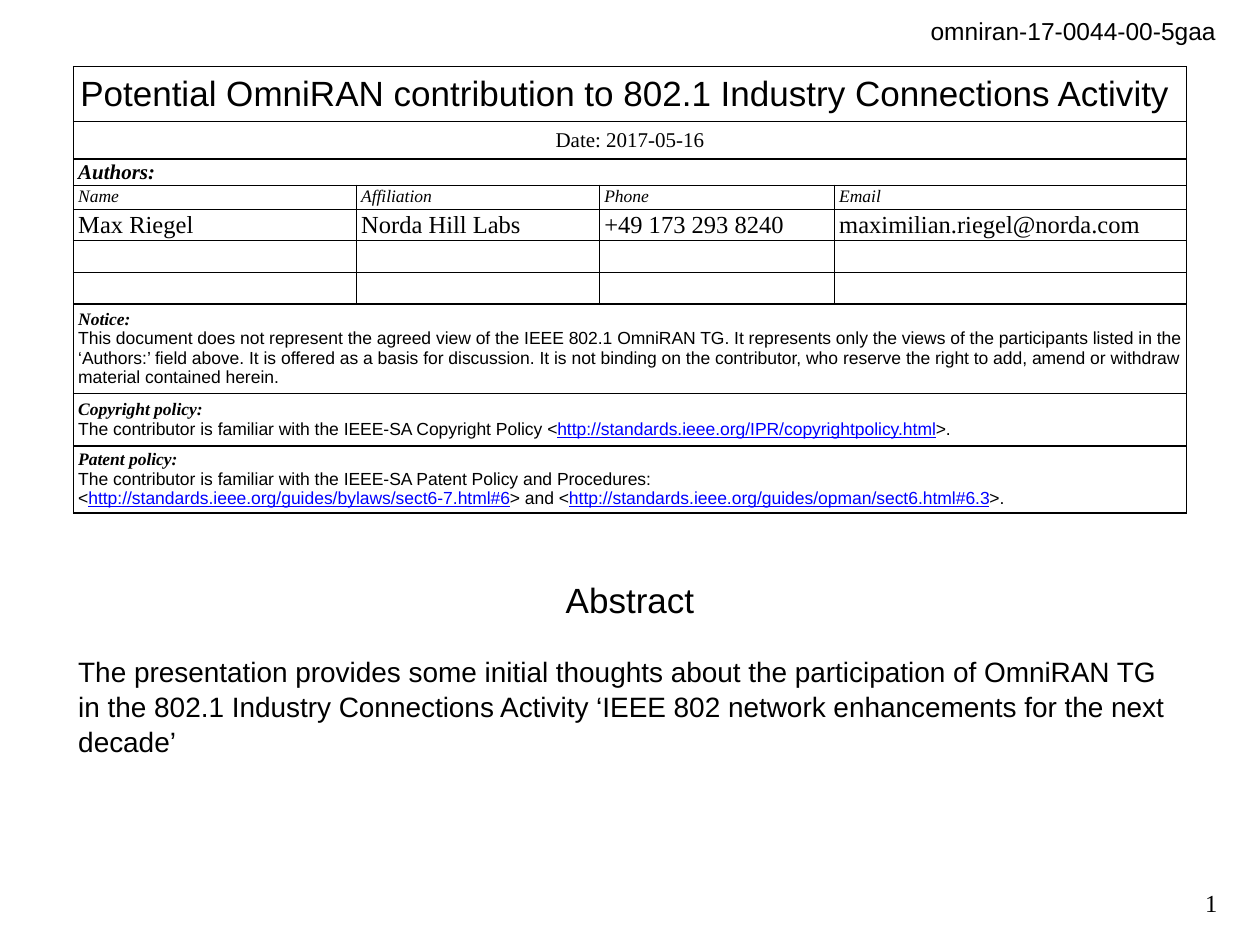
from lxml import etree
from pptx import Presentation
from pptx.dml.color import RGBColor
from pptx.enum import text as t
from pptx.oxml import ns
from pptx.util import Pt

hues = {"ink": "000000", "link": "0000FF"}
serif, sans = "Times New Roman", "Arial"
looks = {
    "title": {"size": Pt(20), "name": sans},
    "body": {"size": Pt(16), "name": sans},
    "doc": {"size": Pt(14), "name": sans},
    "date": {"size": Pt(12), "name": serif},
    "group": {"size": Pt(12), "name": serif, "bold": True, "italic": True},
    "label": {"size": Pt(10), "name": serif, "italic": True},
    "entry": {"size": Pt(14), "name": serif},
    "head": {"size": Pt(10), "name": serif, "bold": True, "italic": True},
    "note": {"size": Pt(10), "name": sans},
    "link": {"size": Pt(10), "name": sans, "underline": True},
}
left, mid = t.PP_ALIGN.LEFT, t.PP_ALIGN.CENTER


def write(frame, paras, align=left):
    """Fill a frame with paragraphs, each a list of (text, look) runs."""
    for i, runs in enumerate(paras):
        para = frame.paragraphs[0] if i == 0 else frame.add_paragraph()
        para.alignment = align
        for words, look in runs:
            run = para.add_run()
            run.text = words
            for key, val in looks[look].items():
                setattr(run.font, key, val)
            hue = hues["link" if look == "link" else "ink"]
            run.font.color.rgb = RGBColor.from_string(hue)


def edge(cell, side, width):
    """Draw one border of a table cell."""
    line = etree.SubElement(cell._tc.get_or_add_tcPr(), ns.qn("a:ln" + side))
    line.set("w", str(Pt(width)))
    fill = etree.SubElement(line, ns.qn("a:solidFill"))
    etree.SubElement(fill, ns.qn("a:srgbClr")).set("val", hues["ink"])


deck = Presentation()
deck.slide_width, deck.slide_height = Pt(720), Pt(540)
slide = deck.slides.add_slide(deck.slide_layouts[1])
title, body = slide.placeholders
title.element.getparent().remove(title.element)

# Document number and page number
for words, look, x, y, w in [
    ("omniran-17-0044-00-5gaa", "doc", 518.4, 5.8, 183.6),
    ("1", "entry", 671.8, 504, 31),
]:
    box = slide.shapes.add_textbox(Pt(x), Pt(y), Pt(w), Pt(24.5))
    box.text_frame.word_wrap = False
    write(box.text_frame, [[(words, look)]], t.PP_ALIGN.RIGHT)

# Contents of the front table: a single item spans the row
rows = [
    (31.4, [[[("Potential OmniRAN contribution to 802.1 Industry Connections Activity ", "title")]]]),
    (21.4, [[[("Date: 2017-05-16", "date")]]]),
    (15, [[[("Authors:", "group")]]]),
    (13.7, [[[(s, "label")]] for s in ("Name", "Affiliation", "Phone", "Email")]),
    (18.2, [[[(s, "entry")]] for s in (
        "Max Riegel", "Norda Hill Labs", "+49 173 293 8240", "maximilian.riegel@norda.com")]),
    (18, [[]] * 4),
    (18, [[]] * 4),
    (51.1, [[
        [("Notice:", "head")],
        [("This document does not represent the agreed view of the IEEE 802.1 OmniRAN TG. "
          "It represents only the views of the participants listed in the ‘Authors:’ field above. "
          "It is offered as a basis for discussion. It is not binding on the contributor, "
          "who reserve the right to add, amend or withdraw material contained herein.", "note")],
    ]]),
    (30, [[
        [("Copyright policy:", "head")],
        [("The contributor is familiar with the IEEE-SA Copyright Policy <", "note"),
         ("http://standards.ieee.org/IPR/copyrightpolicy.html", "link"), (">.", "note")],
    ]]),
    (38.3, [[
        [("Patent policy:", "head")],
        [("The contributor is familiar with the IEEE-SA Patent Policy and Procedures:", "note")],
        [("<", "note"), ("http://standards.ieee.org/guides/bylaws/sect6-7.html#6", "link"),
         ("> and <", "note"), ("http://standards.ieee.org/guides/opman/sect6.html#6.3", "link"),
         (">.", "note")],
    ]]),
]
cols = [161.7, 138.9, 134.3, 201.1]

# Front table
high = sum(h for h, cells in rows)
grid = slide.shapes.add_table(
    len(rows), len(cols), Pt(42), Pt(38), Pt(sum(cols)), Pt(high)).table
grid.first_row = grid.horz_banding = False
for col, w in zip(grid.columns, cols):
    col.width = Pt(w)
for r, (h, items) in enumerate(rows):
    grid.rows[r].height = Pt(h)
    if len(items) == 1:
        grid.cell(r, 0).merge(grid.cell(r, 3))
    pad = 2.7 if r < 2 else 0
    for c in range(len(cols)):
        cell = grid.cell(r, c)
        form = {"margin_left": Pt(2.7), "margin_right": Pt(2.7), "margin_top": Pt(pad),
                "margin_bottom": Pt(pad), "vertical_anchor": t.MSO_ANCHOR.MIDDLE}
        for key, val in form.items():
            setattr(cell, key, val)
        edge(cell, "L", 1 if c == 0 else 0.5)
        edge(cell, "R", 1 if c == 3 else 0.5)
        edge(cell, "T", 0.5 if 3 <= r <= 6 else 1)
        edge(cell, "B", 0.5 if 2 <= r <= 5 else 1)
        cell.fill.background()
        if c < len(items) and items[c]:
            write(cell.text_frame, items[c], mid if r < 2 else left)
        else:  # keep empty cells from growing the row
            end = etree.SubElement(cell.text_frame.paragraphs[0]._p, ns.qn("a:endParaRPr"))
            end.set("sz", "1000")

# Abstract
body.left, body.top, body.width, body.height = Pt(42), Pt(326.9), Pt(636), Pt(165.6)
frame = body.text_frame
form = {"margin_left": Pt(2.7), "margin_right": Pt(2.7), "margin_top": Pt(2.7),
        "margin_bottom": Pt(2.7), "word_wrap": True, "auto_size": t.MSO_AUTO_SIZE.NONE,
        "vertical_anchor": t.MSO_ANCHOR.TOP}
for key, val in form.items():
    setattr(frame, key, val)
write(frame, [
    [("Abstract", "title")],
    [("The presentation provides some initial thoughts about the participation of OmniRAN TG "
      "in the 802.1 Industry Connections Activity ‘IEEE 802 network enhancements for the next "
      "decade’", "body")],
])
for para, align, gap in zip(frame.paragraphs, (mid, left), (0, 19)):
    para.alignment, para.space_before, para.line_spacing = align, Pt(gap), 1.04
    props = para._p.get_or_add_pPr()
    props.set("marL", "0")
    props.set("indent", "0")
    etree.SubElement(props, ns.qn("a:buNone"))

deck.save("out.pptx")
